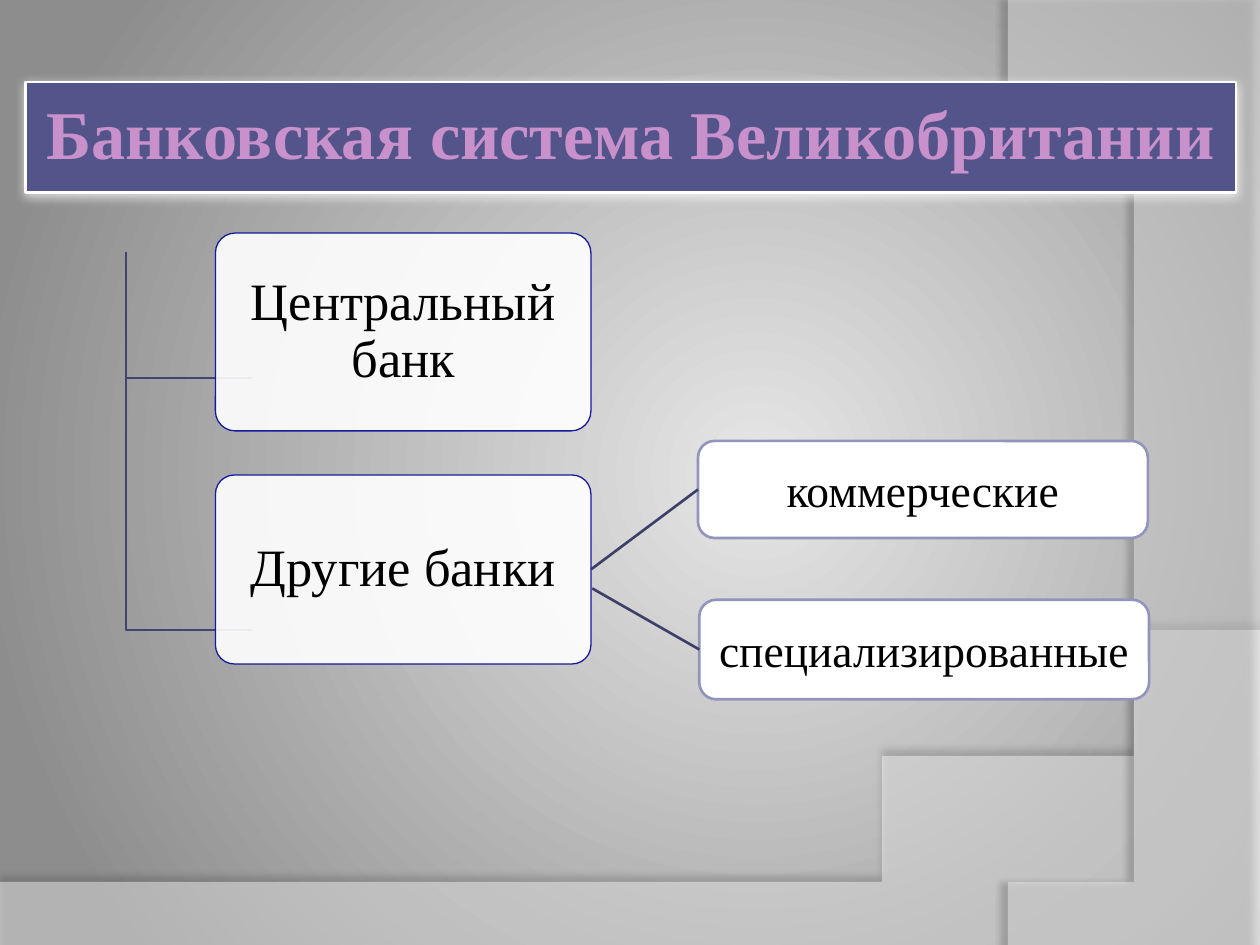
from lxml.etree import SubElement
from pptx import Presentation
from pptx.dml.color import RGBColor
from pptx.enum.shapes import MSO_CONNECTOR as Connector, MSO_SHAPE as Shape
from pptx.enum.text import MSO_ANCHOR as Anchor, MSO_AUTO_SIZE as AutoSize, PP_ALIGN as Align
from pptx.oxml.ns import qn
from pptx.util import Inches, Pt

COLORS = {
    "center": "E6E6E6", "edge": "8D8D8D", "white": "FFFFFF", "black": "000000",
    "banner": "53548A", "heading": "C991CB", "bank": "16199B",
    "kind": "9394BE", "branch": "42436F", "link": "3E3F68",
}


def color(name):
    return RGBColor.from_string(COLORS[name])


def bezier(start, control1, control2, end, steps=60):
    points = []
    for step in range(steps + 1):
        t = step / steps
        weights = ((1 - t) ** 3, 3 * t * (1 - t) ** 2, 3 * t * t * (1 - t), t ** 3)
        corners = (start, control1, control2, end)
        points.append(tuple(sum(w * c[axis] for w, c in zip(weights, corners))
                            for axis in (0, 1)))
    return points


class SlideBuilder:
    font = "Times New Roman"

    def __init__(self, slide):
        self.slide = slide
        self.shapes = slide.shapes

    def background(self):
        fill = self.slide.background.fill
        fill.gradient()
        for stop, name, position in zip(fill.gradient_stops, ("center", "edge"), (0, 1)):
            stop.color.rgb = color(name)
            stop.position = position
        gradient = self.slide.element.find(".//" + qn("a:gradFill"))
        gradient.remove(gradient.find(qn("a:lin")))
        circle = SubElement(gradient, qn("a:path"), {"path": "circle"})
        SubElement(circle, qn("a:fillToRect"), l="60000", t="50000", r="40000", b="50000")

    def set_alpha(self, shape, percent):
        tint = shape.element.spPr.find(qn("a:solidFill"))[0]
        SubElement(tint, qn("a:alpha"), val=str(percent * 1000))

    def add_shadow(self, shape, name, percent, blur, distance, angle):
        shape.shadow.inherit = False
        effects = shape.element.spPr.find(qn("a:effectLst"))
        shadow = SubElement(effects, qn("a:outerShdw"), blurRad=str(Pt(blur)),
                            dist=str(Pt(distance)), dir=str(angle * 60000),
                            algn="ctr", rotWithShape="0")
        tint = SubElement(shadow, qn("a:srgbClr"), val=COLORS[name])
        SubElement(tint, qn("a:alpha"), val=str(percent * 1000))

    def outline(self, points, close):
        builder = self.shapes.build_freeform(*points[0], scale=Inches(1))
        builder.add_line_segments(points[1:], close=close)
        shape = builder.convert_to_shape()
        shape.shadow.inherit = False
        return shape

    def wave(self, points, alpha, shadow):
        shape = self.outline(points, True)
        shape.fill.solid()
        shape.fill.fore_color.rgb = color("white")
        self.set_alpha(shape, alpha)
        shape.line.fill.background()
        self.add_shadow(shape, "black", *shadow)

    def branch(self, points):
        shape = self.outline(points, False)
        shape.fill.background()
        self.line(shape, "branch", 1.5)

    def line(self, shape, name, width):
        shape.line.color.rgb = color(name)
        shape.line.width = Pt(width)

    def label(self, shape, text, size, name, bold=False, spacing=1.0):
        frame = shape.text_frame
        frame.word_wrap = True
        frame.auto_size = AutoSize.NONE
        frame.vertical_anchor = Anchor.MIDDLE
        frame.margin_left = frame.margin_right = Inches(0.09)
        frame.margin_top = frame.margin_bottom = Inches(0.07)
        frame.text = text
        para = frame.paragraphs[0]
        para.alignment = Align.CENTER
        para.line_spacing = spacing
        para.font.name = self.font
        para.font.size = Pt(size)
        para.font.bold = bold
        para.font.color.rgb = color(name)

    def title(self, text, left, top, width, height):
        title = self.shapes.title
        title.left, title.top = Inches(left), Inches(top)
        title.width, title.height = Inches(width), Inches(height)
        geometry = SubElement(title.element.spPr, qn("a:prstGeom"), prst="roundRect")
        guides = SubElement(geometry, qn("a:avLst"))
        SubElement(guides, qn("a:gd"), name="adj", fmla="val 10000")
        title.fill.solid()
        title.fill.fore_color.rgb = color("banner")
        self.line(title, "white", 1.5)
        self.add_shadow(title, "white", 70, 6, 1, 90)
        self.label(title, text, 39, "heading", True, 0.9)
        self.shapes.element.append(title.element)

    def box(self, text, left, top, width, height, size, border, border_width,
            radius, alpha=100, spacing=1.0):
        box = self.shapes.add_shape(Shape.ROUNDED_RECTANGLE, Inches(left), Inches(top),
                                    Inches(width), Inches(height))
        box.adjustments[0] = radius
        box.shadow.inherit = False
        box.fill.solid()
        box.fill.fore_color.rgb = color("white")
        if alpha < 100:
            self.set_alpha(box, alpha)
        self.line(box, border, border_width)
        self.label(box, text, size, "black", spacing=spacing)
        return box

    def link(self, start, target, source=None):
        link = self.shapes.add_connector(Connector.STRAIGHT, Inches(start[0]),
                                         Inches(start[1]), target.left, target.top)
        if source is not None:
            link.begin_connect(source, 3)
        link.end_connect(target, 1)
        self.line(link, "link", 1.5)
        SubElement(link.element.spPr, qn("a:effectLst"))


def main():
    deck = Presentation()
    deck.slide_width, deck.slide_height = Inches(10), Inches(7.5)
    page = SlideBuilder(deck.slides.add_slide(deck.slide_layouts[5]))
    page.background()

    bottom_curve = bezier((10, 5.2), (5.59, 7.29), (3.91, 7.19), (0, 7.05))
    page.wave([(0, 7.5), (10, 7.5)] + bottom_curve, 45, (35, 4, 3.5, 270))
    side_curve = bezier((8.21, 7.5), (9.35, 6.19), (10.18, 3), (8, 0))
    page.wave([(10, 0.02), (10, 7.5)] + side_curve, 40, (45, 4, 4, 180))

    page.title("Банковская система Великобритании", 0.2, 0.65, 9.61, 0.88)

    banks = []
    for text, top, height, branch_end in (("Центральный банк", 1.85, 1.57, 2.69),
                                          ("Другие банки", 3.77, 1.5, 4.73)):
        page.branch([(1.37, 1.53), (1.37, branch_end), (1.71, branch_end)])
        banks.append(page.box(text, 1.71, top, 2.98, height, 30, "bank", 0.75,
                              0.1, alpha=90, spacing=0.9))

    commercial = page.box("коммерческие", 5.54, 3.5, 3.57, 0.77, 26, "kind", 1.5, 0.17)
    special = page.box("специализированные", 5.55, 4.76, 3.57, 0.79, 26, "kind", 1.5, 0.17)
    page.link((4.69, 4.5), commercial, banks[1])
    page.link((4.7, 4.67), special)

    deck.save("out.pptx")


if __name__ == "__main__":
    main()
